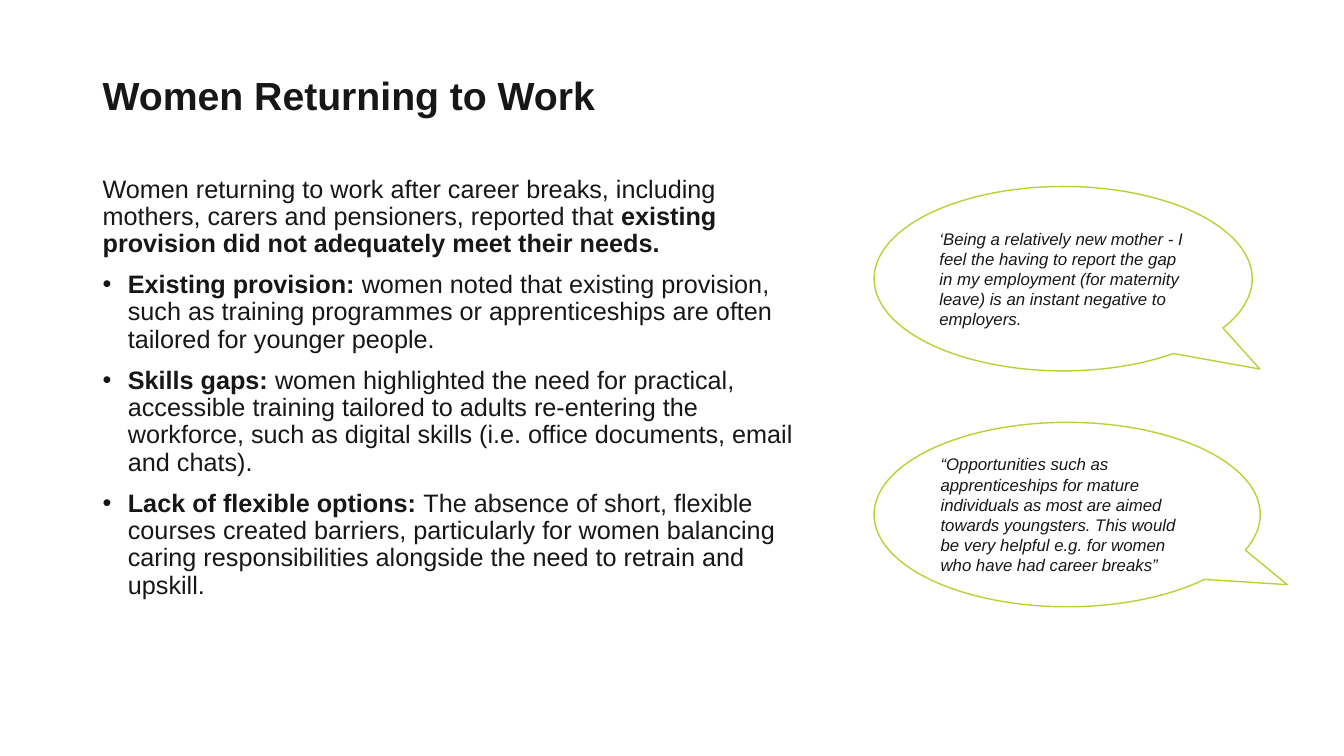
"""Build the slide about women returning to work."""
from dataclasses import dataclass

import pptx
import pptx.dml.color
import pptx.enum.shapes
import pptx.enum.text
import pptx.oxml.ns
import pptx.presentation
import pptx.shapes.autoshape
import pptx.slide
import pptx.text.text
import pptx.util
from lxml import etree

EMU_PER_PX = 9144
FONT = "Arial"
INK = "181717"
LIME = "BBD035"
WHITE = "FFFFFF"
BULLET_INDENT = 25


@dataclass(frozen=True)
class Box:
    """Place and size in px."""

    left: int
    top: int
    width: int
    height: int


@dataclass(frozen=True)
class Run:
    """A stretch of text, bold or not."""

    text: str
    bold: bool = False


@dataclass(frozen=True)
class Passage:
    """A paragraph of the body text."""

    runs: tuple[Run, ...]
    bullet: bool = True


@dataclass(frozen=True)
class Quote:
    """A speech bubble with the offsets of its tip."""

    box: Box
    tip: tuple[float, float]
    text: str


TITLE_BOX = Box(92, 25, 1069, 145)
BODY_BOX = Box(92, 170, 719, 497)
PASSAGES = (
    Passage(
        (
            Run("Women returning to work after career breaks, including mothers, "
                "carers and pensioners, reported that "),
            Run("existing provision did not adequately meet their needs.", True),
        ),
        bullet=False,
    ),
    Passage((
        Run("Existing provision: ", True),
        Run("women noted that existing provision, such as training programmes or "
            "apprenticeships are often tailored for younger people."),
    )),
    Passage((
        Run("Skills gaps: ", True),
        Run("women highlighted the need for practical, accessible training tailored "
            "to adults re-entering the workforce, such as digital skills "
            "(i.e. office documents, email and chats)."),
    )),
    Passage((
        Run("Lack of flexible options: ", True),
        Run("The absence of short, flexible courses created barriers, particularly "
            "for women balancing caring responsibilities alongside the need to "
            "retrain and upskill."),
    )),
)
QUOTES = (
    Quote(
        Box(867, 419, 383, 183), (0.57, 0.38),
        "“Opportunities such as apprenticeships for mature individuals as most are "
        "aimed towards youngsters. This would be very helpful e.g. for women who "
        "have had career breaks”",
    ),
    Quote(
        Box(867, 185, 375, 183), (0.52, 0.49),
        "‘Being a relatively new mother - I feel the having to report the gap in my "
        "employment (for maternity leave) is an instant negative to employers.",
    ),
)


def px(length: int) -> pptx.util.Emu:
    """Turn px into EMU."""
    return pptx.util.Emu(length * EMU_PER_PX)


def place(box: Box) -> tuple[pptx.util.Emu, ...]:
    """Give the box as left, top, width and height in EMU."""
    return px(box.left), px(box.top), px(box.width), px(box.height)


def colour(value: str) -> pptx.dml.color.RGBColor:
    """Turn a hex string into a colour."""
    return pptx.dml.color.RGBColor.from_string(value)


def add_text(
    paragraph: pptx.text.text._Paragraph,
    text: str,
    *,
    size: int,
    bold: bool = False,
    italic: bool = False,
) -> None:
    """Append formatted text to a paragraph."""
    run = paragraph.add_run()
    run.text = text
    run.font.name = FONT
    run.font.size = pptx.util.Pt(size)
    run.font.bold = bold
    run.font.italic = italic
    run.font.color.rgb = colour(INK)


def add_bullet(paragraph: pptx.text.text._Paragraph) -> None:
    """Give a paragraph a bullet with a hanging indent."""
    properties = paragraph._p.get_or_add_pPr()
    properties.set("marL", str(px(BULLET_INDENT)))
    properties.set("indent", str(-px(BULLET_INDENT)))
    etree.SubElement(properties, pptx.oxml.ns.qn("a:buFont"), typeface=FONT)
    etree.SubElement(properties, pptx.oxml.ns.qn("a:buChar"), char="•")


def add_text_frame(slide: pptx.slide.Slide, box: Box) -> pptx.text.text.TextFrame:
    """Add a wrapping text box and return its frame."""
    frame = slide.shapes.add_textbox(*place(box)).text_frame
    frame.word_wrap = True
    return frame


def draw_title(slide: pptx.slide.Slide) -> None:
    """Draw the heading."""
    frame = add_text_frame(slide, TITLE_BOX)
    frame.vertical_anchor = pptx.enum.text.MSO_ANCHOR.MIDDLE
    paragraph = frame.paragraphs[0]
    paragraph.line_spacing = 0.9
    add_text(paragraph, "Women Returning to Work", size=28, bold=True)


def draw_body(slide: pptx.slide.Slide) -> None:
    """Draw the introduction and its bullet points."""
    frame = add_text_frame(slide, BODY_BOX)
    for index, passage in enumerate(PASSAGES):
        paragraph = frame.add_paragraph() if index else frame.paragraphs[0]
        paragraph.line_spacing = 0.9
        paragraph.space_before = pptx.util.Pt(10 if index else 0)
        if passage.bullet:
            add_bullet(paragraph)
        for run in passage.runs:
            add_text(paragraph, run.text, size=18, bold=run.bold)


def draw_quote(slide: pptx.slide.Slide, quote: Quote) -> None:
    """Draw one speech bubble."""
    shape = slide.shapes.add_shape(
        pptx.enum.shapes.MSO_SHAPE.OVAL_CALLOUT, *place(quote.box)
    )
    shape.shadow.inherit = False
    shape.adjustments[0], shape.adjustments[1] = quote.tip
    shape.fill.solid()
    shape.fill.fore_color.rgb = colour(WHITE)
    shape.line.color.rgb = colour(LIME)
    shape.line.width = pptx.util.Pt(1)
    frame = shape.text_frame
    frame.word_wrap = True
    frame.vertical_anchor = pptx.enum.text.MSO_ANCHOR.MIDDLE
    paragraph = frame.paragraphs[0]
    paragraph.alignment = pptx.enum.text.PP_ALIGN.LEFT
    add_text(paragraph, quote.text, size=12, italic=True)


def main() -> None:
    """Build and save the presentation."""
    presentation = pptx.Presentation()
    presentation.slide_width = px(1333)
    presentation.slide_height = px(750)
    slide = presentation.slides.add_slide(presentation.slide_layouts[6])
    draw_title(slide)
    draw_body(slide)
    for quote in QUOTES:
        draw_quote(slide, quote)
    presentation.save("out.pptx")


if __name__ == "__main__":
    main()
